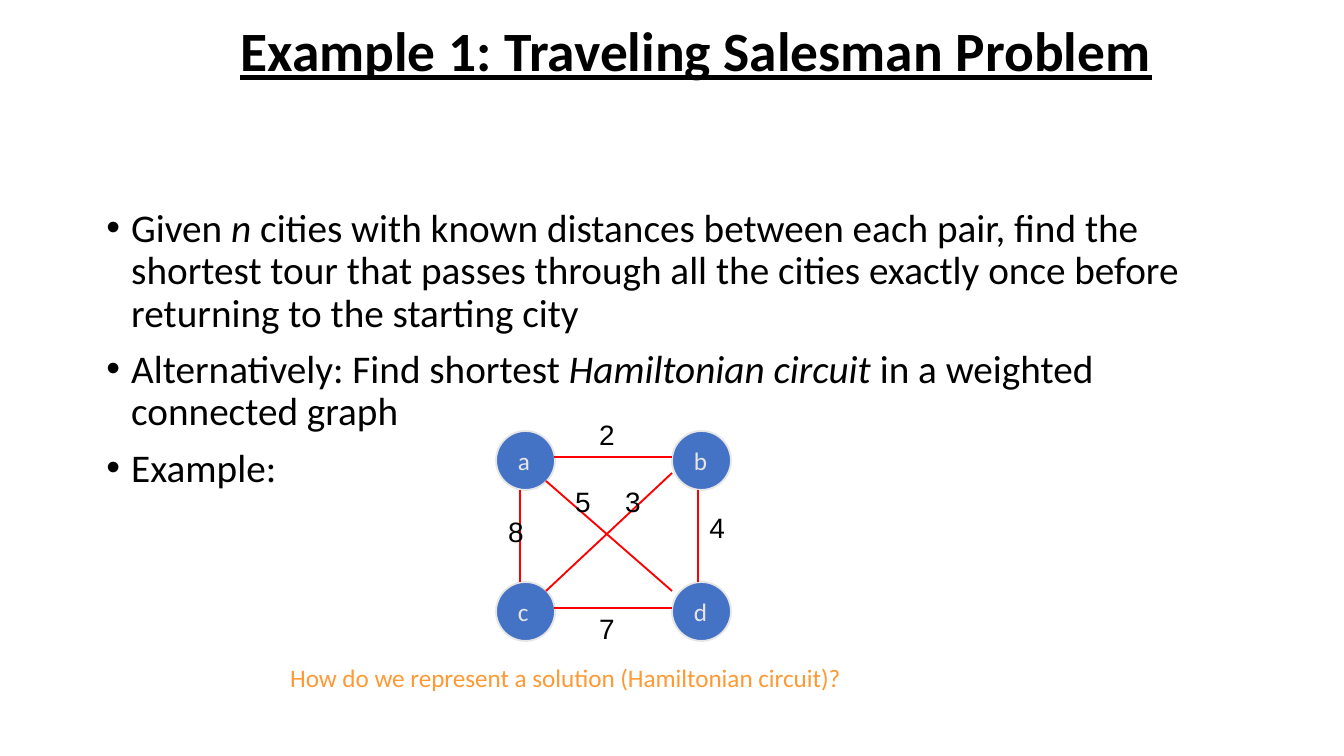
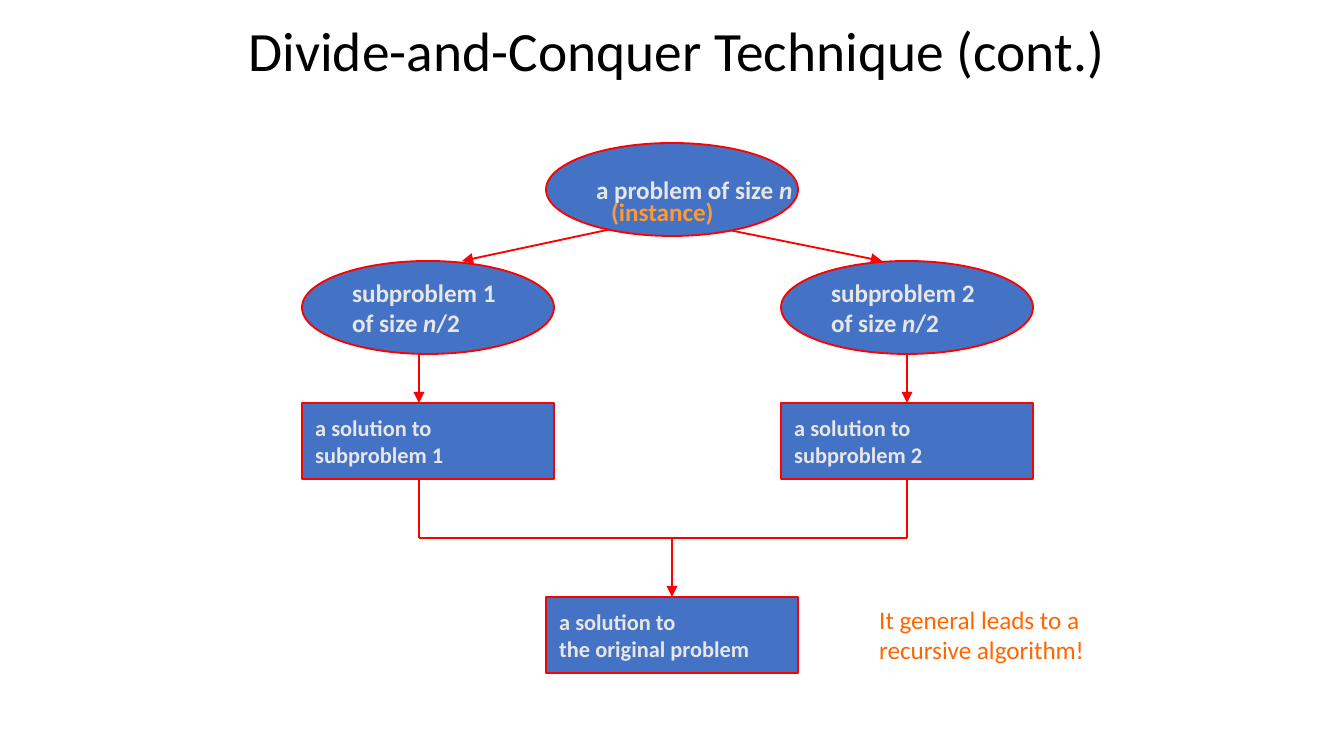
from lxml import etree
from pptx import Presentation
from pptx import util as u
from pptx.dml import color
from pptx.enum import shapes, text
from pptx.oxml import ns

EMU_PER_PX = 914400 / 134.4
BLACK, RED, BLUE, PALE = "000000", "FF0000", "4472C4", "E7E6E6"
AMBER, ORANGE = "FF9933", "FF6600"
OVAL, BOX = shapes.MSO_SHAPE.OVAL, shapes.MSO_SHAPE.RECTANGLE

TOUR_TITLE = "Example 1: Traveling Salesman Problem"
TOUR_POINTS = [
    "Given *n* cities with known distances between each pair, find the shortest tour "
    "that passes through all the cities exactly once before returning to the starting city",
    "Alternatively: Find shortest *Hamiltonian circuit* in a weighted connected graph",
    "Example:",
]
TOUR_QUESTION = "How do we represent a solution (Hamiltonian circuit)?"
CITIES = ["ab", "cd"]
CITY_LEFT, CITY_TOP, CITY_SIZE = 496, 431, 59
CITY_STEP_X, CITY_STEP_Y = 176, 151
ROADS = [
    ("2", (586, 411), (554, 457, 672, 457)),
    ("8", (495, 508), (520, 490, 520, 582)),
    ("7", (586, 605), (554, 608, 672, 608)),
    ("4", (696, 504), (698, 490, 698, 582)),
    ("5", (562, 478), (546, 481, 672, 591)),
    ("3", (612, 478), (672, 473, 546, 591)),
]

DIVIDE_TITLE = "Divide-and-Conquer Technique (cont.)"
STEP_WIDTH, OVAL_HEIGHT, BOX_HEIGHT = 252, 93, 76
MIDDLE, PROBLEM_TOP, SUBPROBLEM_TOP = 546, 143, 261
SOLUTION_TOP, RESULT_TOP, JOIN_Y, STEM = 403, 597, 538, 672
BRANCHES = [(1, 302, 419, (621, 462)), (2, 781, 907, (714, 882))]


def px(value):
    return u.Emu(round(value * EMU_PER_PX))


def rgb(hex_text):
    return color.RGBColor.from_string(hex_text)


def write(frame, lines, size, hue, bold=False, font="Calibri", wrap=True):
    frame.word_wrap = wrap
    frame.auto_size = text.MSO_AUTO_SIZE.NONE
    for index, line in enumerate(lines):
        paragraph = frame.add_paragraph() if index else frame.paragraphs[0]
        paragraph.alignment = text.PP_ALIGN.LEFT
        paragraph.font.name = font
        paragraph.font.size = u.Pt(size)
        paragraph.font.bold = bold
        paragraph.font.color.rgb = rgb(hue)
        for part, words in enumerate(line.split("*")):
            run = paragraph.add_run()
            run.text = words
            if part % 2:
                run.font.italic = True


def add_slide(presentation, title, left, width, bold=False):
    slide = presentation.slides.add_slide(presentation.slide_layouts[5])
    shape = slide.shapes.title
    shape.left, shape.top, shape.width, shape.height = map(px, (left, 16, width, 76))
    frame = shape.text_frame
    frame.vertical_anchor = text.MSO_ANCHOR.MIDDLE
    write(frame, [title], 29.7, BLACK, bold)
    frame.paragraphs[0].line_spacing = 0.9
    frame.paragraphs[0].font.underline = bold
    return slide


def add_text(slide, place, lines, size, hue, **style):
    shape = slide.shapes.add_textbox(*map(px, place))
    write(shape.text_frame, lines, size, hue, **style)


def add_points(slide, place, points):
    frame = slide.shapes.add_textbox(*map(px, place)).text_frame
    for _ in points[1:]:
        frame.add_paragraph()
    for paragraph in frame.paragraphs:
        properties = paragraph._p.get_or_add_pPr()
        properties.set("marL", str(px(25)))
        properties.set("indent", str(-px(25)))
        etree.SubElement(properties, ns.qn("a:buFont")).set("typeface", "Arial")
        etree.SubElement(properties, ns.qn("a:buChar")).set("char", "•")
    frame.word_wrap = True
    for index, (paragraph, point) in enumerate(zip(frame.paragraphs, points)):
        paragraph.line_spacing = 0.9
        if index:
            paragraph.space_before = u.Pt(7.5)
        paragraph.font.name = "Calibri"
        paragraph.font.size = u.Pt(21)
        paragraph.font.color.rgb = rgb(BLACK)
        for part, words in enumerate(point.split("*")):
            run = paragraph.add_run()
            run.text = words
            if part % 2:
                run.font.italic = True


def add_node(slide, kind, place, lines, size, outline, bold=False):
    shape = slide.shapes.add_shape(kind, *map(px, place))
    shape.shadow.inherit = False
    shape.fill.solid()
    shape.fill.fore_color.rgb = rgb(BLUE)
    shape.line.color.rgb = rgb(outline)
    shape.line.width = u.Pt(1)
    shape.text_frame.vertical_anchor = text.MSO_ANCHOR.MIDDLE
    write(shape.text_frame, lines, size, PALE, bold, wrap=False)


def add_line(slide, ends, arrow=False):
    line = slide.shapes.add_connector(shapes.MSO_CONNECTOR.STRAIGHT, *map(px, ends))
    line.line.color.rgb = rgb(RED)
    line.line.width = u.Pt(1)
    if arrow:
        etree.SubElement(line.line._get_or_add_ln(), ns.qn("a:tailEnd")).set("type", "triangle")
    etree.SubElement(line._element.spPr, ns.qn("a:effectLst"))


def build_tour(presentation):
    slide = add_slide(presentation, TOUR_TITLE, 227, 949, bold=True)
    add_points(slide, (93, 202, 1158, 480), TOUR_POINTS)
    for row, names in enumerate(CITIES):
        for column, name in enumerate(names):
            place = (CITY_LEFT + column * CITY_STEP_X, CITY_TOP + row * CITY_STEP_Y,
                     CITY_SIZE, CITY_SIZE)
            add_node(slide, OVAL, place, [name], 13.5, PALE)
    for _, _, ends in ROADS:
        add_line(slide, ends)
    for distance, corner, _ in ROADS:
        add_text(slide, (*corner, 43, 47), [distance], 15, BLACK, font="Arial", wrap=False)
    add_text(slide, (277, 656, 756, 44), [TOUR_QUESTION], 13.5, AMBER)


def build_divide(presentation):
    slide = add_slide(presentation, DIVIDE_TITLE, 235, 907)
    for number, left, axis, (start, end) in BRANCHES:
        add_node(slide, OVAL, (left, SUBPROBLEM_TOP, STEP_WIDTH, OVAL_HEIGHT),
                 [f"subproblem {number}", "of size *n*/2"], 13.5, RED, bold=True)
        add_node(slide, BOX, (left, SOLUTION_TOP, STEP_WIDTH, BOX_HEIGHT),
                 ["a solution to", f"subproblem {number}"], 12, RED, bold=True)
        add_line(slide, (start, 227, end, SUBPROBLEM_TOP), arrow=True)
        add_line(slide, (axis, SUBPROBLEM_TOP + OVAL_HEIGHT - 1, axis, SOLUTION_TOP), arrow=True)
        add_line(slide, (axis, SOLUTION_TOP + BOX_HEIGHT, axis, JOIN_Y))
    add_node(slide, OVAL, (MIDDLE, PROBLEM_TOP, STEP_WIDTH, OVAL_HEIGHT),
             ["a problem of size *n*"], 13.5, RED, bold=True)
    add_node(slide, BOX, (MIDDLE, RESULT_TOP, STEP_WIDTH, BOX_HEIGHT),
             ["a solution to", "the original problem"], 12, RED, bold=True)
    add_line(slide, (BRANCHES[0][2], JOIN_Y, BRANCHES[1][2], JOIN_Y))
    add_line(slide, (STEM, JOIN_Y, STEM, RESULT_TOP), arrow=True)
    add_text(slide, (598, 190, 160, 44), ["(instance)"], 13.5, AMBER, bold=True)
    add_text(slide, (866, 598, 302, 76), ["It general leads to a recursive algorithm!"],
             13.5, ORANGE)


def main():
    presentation = Presentation()
    presentation.slide_width, presentation.slide_height = px(1344), px(756)
    build_tour(presentation)
    build_divide(presentation)
    presentation.save("out.pptx")


if __name__ == "__main__":
    main()
